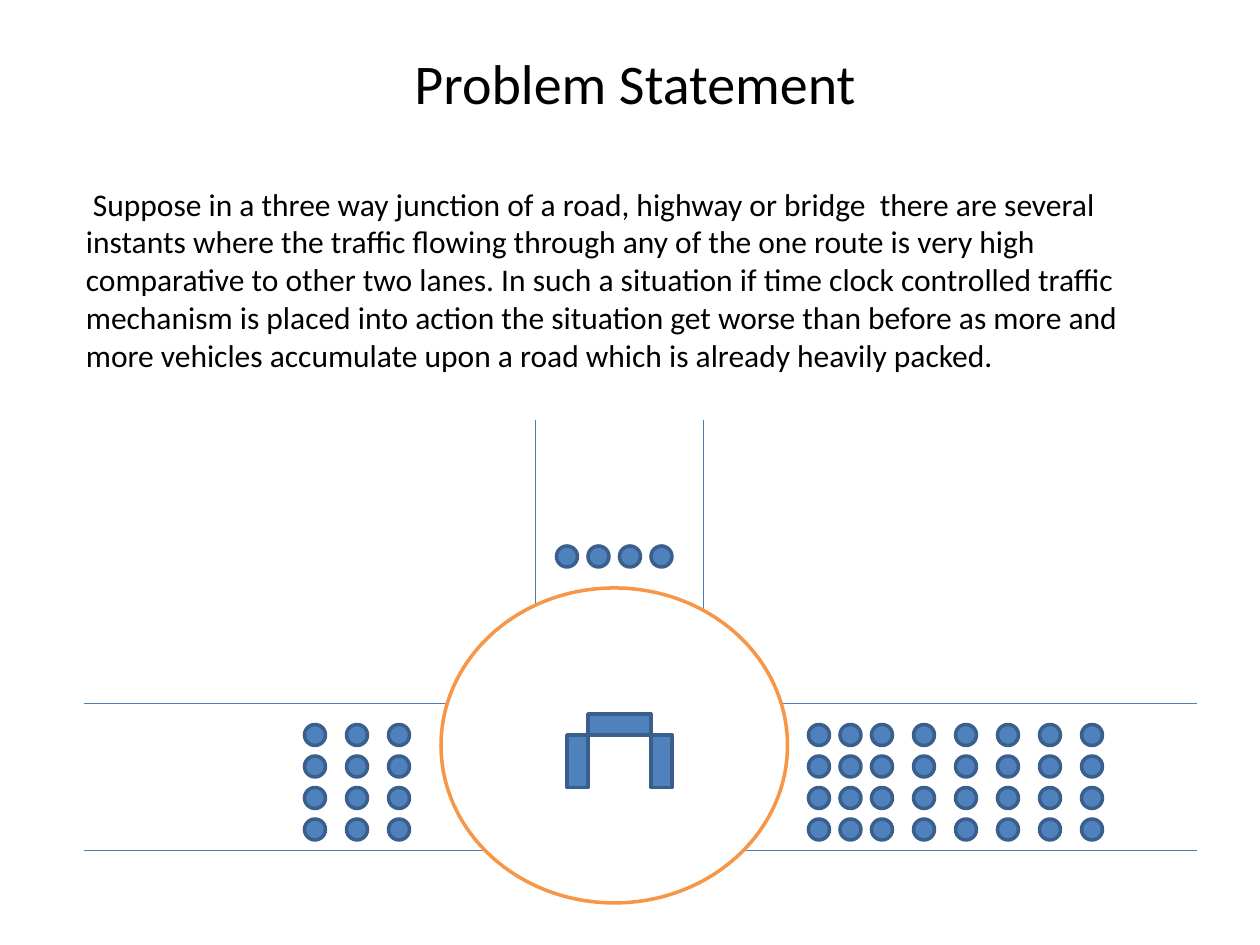
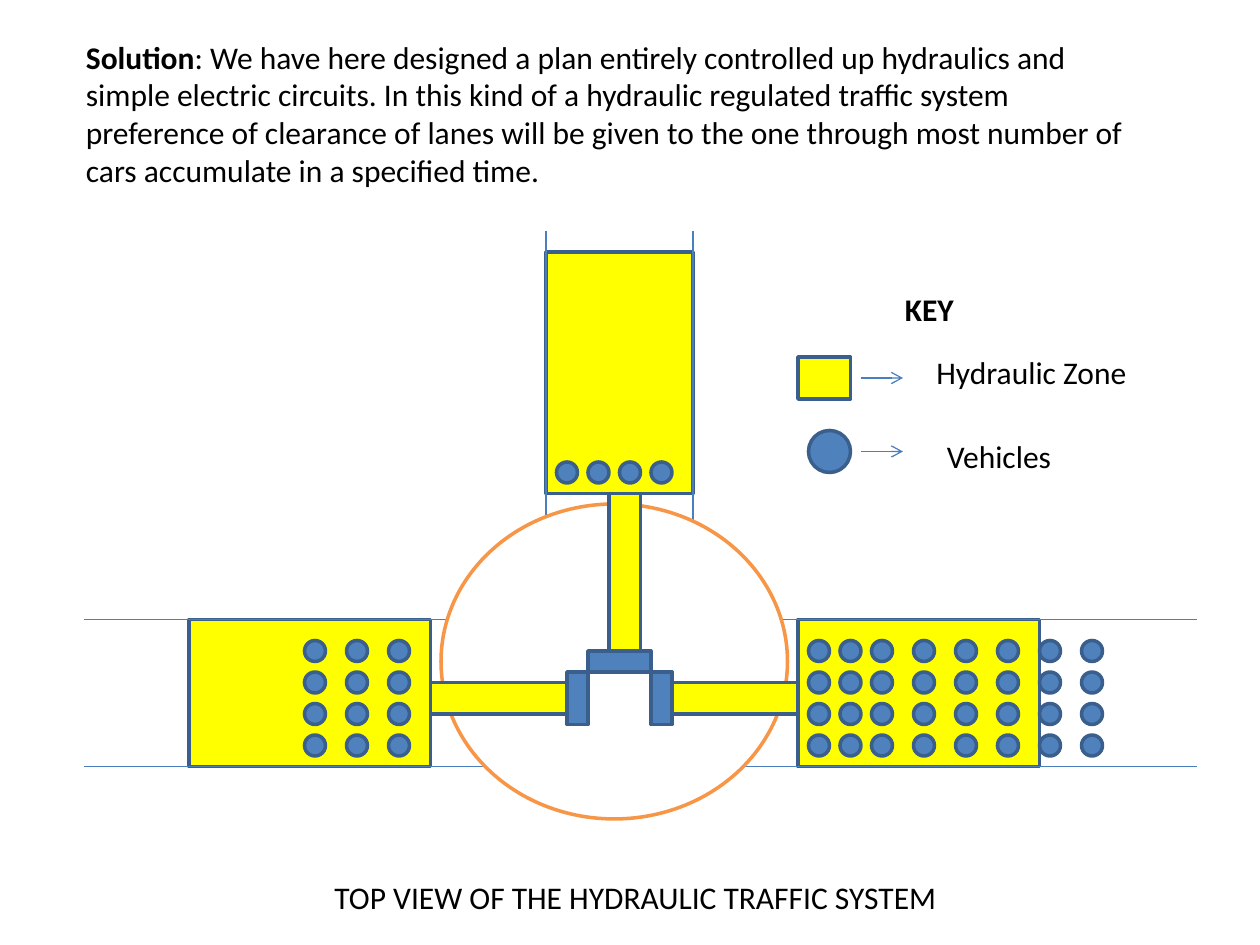
from dataclasses import dataclass
from itertools import product

from pptx import Presentation
from pptx.dml.color import RGBColor
from pptx.enum.shapes import MSO_CONNECTOR as Connector
from pptx.enum.shapes import MSO_SHAPE as Preset
from pptx.enum.text import MSO_ANCHOR as Anchor
from pptx.enum.text import MSO_AUTO_SIZE as AutoSize
from pptx.enum.text import PP_ALIGN as Align
from pptx.oxml.ns import qn
from pptx.util import Pt
from lxml.etree import SubElement

PX = 9525  # EMU per px, 96 px to the inch


@dataclass(frozen=True)
class Theme:
    font: str = "Calibri"
    title_size: int = 32
    body_size: int = 18
    text: RGBColor = RGBColor(0x00, 0x00, 0x00)
    paper: RGBColor = RGBColor(0xFF, 0xFF, 0xFF)
    blue: RGBColor = RGBColor(0x4F, 0x81, 0xBD)
    outline: RGBColor = RGBColor(0x3A, 0x5F, 0x8C)
    road: RGBColor = RGBColor(0x4B, 0x7E, 0xBC)
    junction: RGBColor = RGBColor(0xF7, 0x96, 0x46)
    hydraulic: RGBColor = RGBColor(0xFF, 0xFF, 0x00)
    outline_width: float = 2
    road_width: float = 0.75


theme = Theme()


def draw_shape(slide, preset, box, fill=theme.blue, line=theme.outline):
    shape = slide.shapes.add_shape(preset, *[value * PX for value in box])
    shape.shadow.inherit = False
    shape.fill.solid()
    shape.fill.fore_color.rgb = fill
    shape.line.color.rgb = line
    shape.line.width = Pt(theme.outline_width)


def write_text(shape, box, text, lead="", size=theme.body_size, bold=False, align=Align.LEFT):
    """Place a text box or placeholder and fill it, with an optional bold lead-in."""
    shape.left, shape.top, shape.width, shape.height = [value * PX for value in box]
    frame = shape.text_frame
    frame.word_wrap = True
    frame.auto_size = AutoSize.NONE
    frame.vertical_anchor = Anchor.TOP
    paragraph = frame.paragraphs[0]
    paragraph.alignment = align
    for part, is_bold in ((lead, True), (text, bold)):
        if part:
            run = paragraph.add_run()
            run.text = part
            run.font.name = theme.font
            run.font.size = Pt(size)
            run.font.bold = is_bold
            run.font.color.rgb = theme.text


presentation = Presentation()
presentation.slide_width = 960 * PX
presentation.slide_height = 720 * PX
title_only, blank = presentation.slide_layouts[5], presentation.slide_layouts[6]
problem = presentation.slides.add_slide(title_only)
solution = presentation.slides.add_slide(blank)

# Hydraulic zones lie under the roads
for zone in ((416, 192, 112, 184), (608, 472, 184, 112), (144, 472, 184, 112)):
    draw_shape(solution, Preset.RECTANGLE, zone, fill=theme.hydraulic)

# Road edges, and the arrows of the key
lines = [
    (problem, (912, 536, 64, 536), False),
    (problem, (912, 648, 64, 648), False),
    (problem, (408, 320, 408, 648), False),
    (problem, (536, 320, 536, 648), False),
    (solution, (912, 472, 64, 472), False),
    (solution, (912, 584, 64, 584), False),
    (solution, (416, 176, 416, 592), False),
    (solution, (528, 176, 528, 592), False),
    (solution, (656, 288, 688, 288), True),
    (solution, (656, 344, 688, 344), True),
]
for slide, ends, has_arrow in lines:
    connector = slide.shapes.add_connector(Connector.STRAIGHT, *[value * PX for value in ends])
    connector.line.color.rgb = theme.road
    connector.line.width = Pt(theme.road_width)
    if has_arrow:
        SubElement(connector.line._get_or_add_ln(), qn("a:tailEnd"), type="arrow")
    SubElement(connector._element.spPr, qn("a:effectLst"))

# Junction, gates and waiting vehicles
vehicle = 16
lane_columns = (232, 264, 296, 616, 640, 664, 696, 728, 760, 792, 824)
for slide, junction_top, gate_top in ((problem, 448, 544), (solution, 384, 496)):
    draw_shape(slide, Preset.OVAL, (336, junction_top, 264, 240),
               fill=theme.paper, line=theme.junction)
    for gate_left in (432, 496):
        draw_shape(slide, Preset.RECTANGLE, (gate_left, gate_top + 16, 16, 40))
    draw_shape(slide, Preset.RECTANGLE, (448, gate_top, 48, 16))

    lane_rows = [junction_top + 104 + 24 * row for row in range(4)]
    places = list(product(lane_columns, lane_rows))
    places += [(424 + 24 * column, junction_top - 32) for column in range(4)]
    for left, top in places:
        draw_shape(slide, Preset.OVAL, (left, top, vehicle, vehicle))

# Pipes from the gates to the hydraulic zones
for pipe in ((328, 520, 104, 24), (512, 520, 96, 24), (464, 376, 24, 120)):
    draw_shape(solution, Preset.RECTANGLE, pipe, fill=theme.hydraulic)

# Key symbols
draw_shape(solution, Preset.RECTANGLE, (608, 272, 40, 32), fill=theme.hydraulic)
draw_shape(solution, Preset.OVAL, (616, 328, 32, 32))

# Words
write_text(problem.shapes.title, (176, 32, 616, 61), "Problem Statement",
           size=theme.title_size, align=Align.CENTER)

problem_text = (
    " Suppose in a three way junction of a road, highway or bridge  there are several "
    "instants where the traffic flowing through any of the one route is very high "
    "comparative to other two lanes. In such a situation if time clock controlled traffic  "
    "mechanism is placed into action the situation get worse than before as more and "
    "more vehicles accumulate upon a road which is already heavily packed."
)
solution_text = (
    ": We have here designed a plan entirely controlled up hydraulics and simple electric "
    "circuits. In this kind of a hydraulic regulated traffic system preference of clearance "
    "of lanes will be given to the one through most number of cars accumulate in a "
    "specified time."
)
texts = [
    (problem, (56, 136, 824, 156), problem_text, {}),
    (solution, (56, 24, 832, 126), solution_text, {"lead": "Solution"}),
    (solution, (680, 216, 64, 38), "KEY", {"bold": True}),
    (solution, (704, 264, 192, 38), "Hydraulic Zone", {}),
    (solution, (712, 328, 144, 38), "Vehicles", {}),
    (solution, (240, 664, 496, 38), " TOP VIEW OF THE HYDRAULIC TRAFFIC SYSTEM", {}),
]
for slide, box, text, text_format in texts:
    write_text(slide.shapes.add_textbox(0, 0, 0, 0), box, text, **text_format)

presentation.save("out.pptx")
